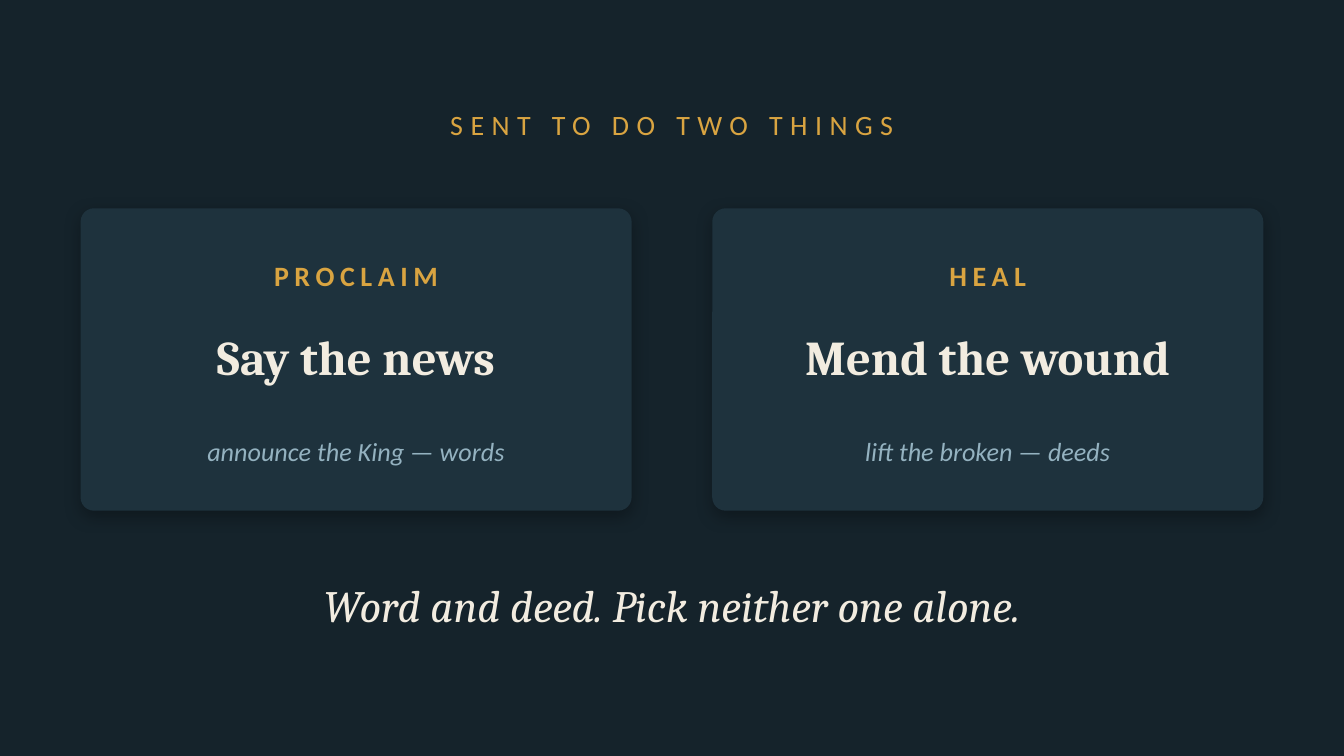
from dataclasses import dataclass

import pptx
import pptx.dml.color
import pptx.enum.shapes
import pptx.enum.text
import pptx.oxml
import pptx.oxml.ns
import pptx.util
from pptx.util import Inches

RGBColor = pptx.dml.color.RGBColor

NIGHT = RGBColor(0x15, 0x23, 0x2B)
PANEL = RGBColor(0x1E, 0x32, 0x3D)
GOLD = RGBColor(0xD9, 0xA4, 0x41)
CREAM = RGBColor(0xF2, 0xEC, 0xE0)
MIST = RGBColor(0x94, 0xB2, 0xC0)

SANS = "Calibri"
SERIF = "Cambria"

SLIDE_W = 10
SLIDE_H = SLIDE_W * 9 / 16
CARD_LEFT, CARD_TOP = 0.6, 1.55
CARD_W, CARD_H = 4.1, 2.25
CARD_GAP = 0.6
CARD_RADIUS = 0.1

SHADOW_XML = (
    f'<a:effectLst {pptx.oxml.ns.nsdecls("a")}>'
    '<a:outerShdw blurRad="114300" dist="38100" dir="5400000" algn="bl" rotWithShape="0">'
    '<a:srgbClr val="000000"><a:alpha val="30000"/></a:srgbClr>'
    "</a:outerShdw></a:effectLst>"
)


@dataclass(frozen=True)
class Card:
    label: str
    heading: str
    note: str


CARDS = [
    Card("PROCLAIM", "Say the news", "announce the King — words"),
    Card("HEAL", "Mend the wound", "lift the broken — deeds"),
]


def write_text(sp, text: str, *, size: float, color: RGBColor, font: str = SANS,
               bold: bool = False, italic: bool = False, spacing: float = 0) -> None:
    tf = sp.text_frame
    tf.word_wrap = True
    tf.auto_size = pptx.enum.text.MSO_AUTO_SIZE.NONE
    tf.vertical_anchor = pptx.enum.text.MSO_ANCHOR.MIDDLE
    p = tf.paragraphs[0]
    p.alignment = pptx.enum.text.PP_ALIGN.CENTER
    r = p.add_run()
    r.text = text
    r.font.name = font
    r.font.size = pptx.util.Pt(size)
    r.font.bold = bold
    r.font.italic = italic
    r.font.color.rgb = color
    if spacing:
        r.font._element.set("spc", str(round(spacing * 100)))


def add_text(s, left: float, top: float, width: float, height: float,
             text: str, **style) -> None:
    sp = s.shapes.add_textbox(Inches(left), Inches(top), Inches(width), Inches(height))
    write_text(sp, text, **style)


def add_card(s, card: Card, left: float) -> None:
    sp = s.shapes.add_shape(
        pptx.enum.shapes.MSO_SHAPE.ROUNDED_RECTANGLE,
        Inches(left), Inches(CARD_TOP), Inches(CARD_W), Inches(CARD_H))
    sp.adjustments[0] = CARD_RADIUS / CARD_H
    sp.fill.solid()
    sp.fill.fore_color.rgb = PANEL
    sp.line.fill.background()
    sp._element.spPr.append(pptx.oxml.parse_xml(SHADOW_XML))

    add_text(s, left, 1.8, CARD_W, 0.5, card.label,
             size=15, color=GOLD, bold=True, spacing=3)
    add_text(s, left + 0.15, 2.3, CARD_W - 0.3, 0.7, card.heading,
             size=26, color=CREAM, font=SERIF, bold=True)
    add_text(s, left + 0.2, 3.08, CARD_W - 0.4, 0.55, card.note,
             size=14, color=MIST, italic=True)


def main() -> None:
    prs = pptx.Presentation()
    prs.slide_width = Inches(SLIDE_W)
    prs.slide_height = Inches(SLIDE_H)
    s = prs.slides.add_slide(prs.slide_layouts[5])
    s.background.fill.solid()
    s.background.fill.fore_color.rgb = NIGHT

    title = s.shapes.title
    title.left, title.top = Inches(0.5), Inches(0.7)
    title.width, title.height = Inches(9), Inches(0.45)
    write_text(title, "SENT TO DO TWO THINGS", size=15, color=GOLD, spacing=4)

    for i, card in enumerate(CARDS):
        add_card(s, card, CARD_LEFT + i * (CARD_W + CARD_GAP))

    add_text(s, 0.8, 4.2, 8.4, 0.6, "Word and deed. Pick neither one alone.",
             size=24, color=CREAM, font=SERIF, italic=True)
    prs.save("out.pptx")


if __name__ == "__main__":
    main()
